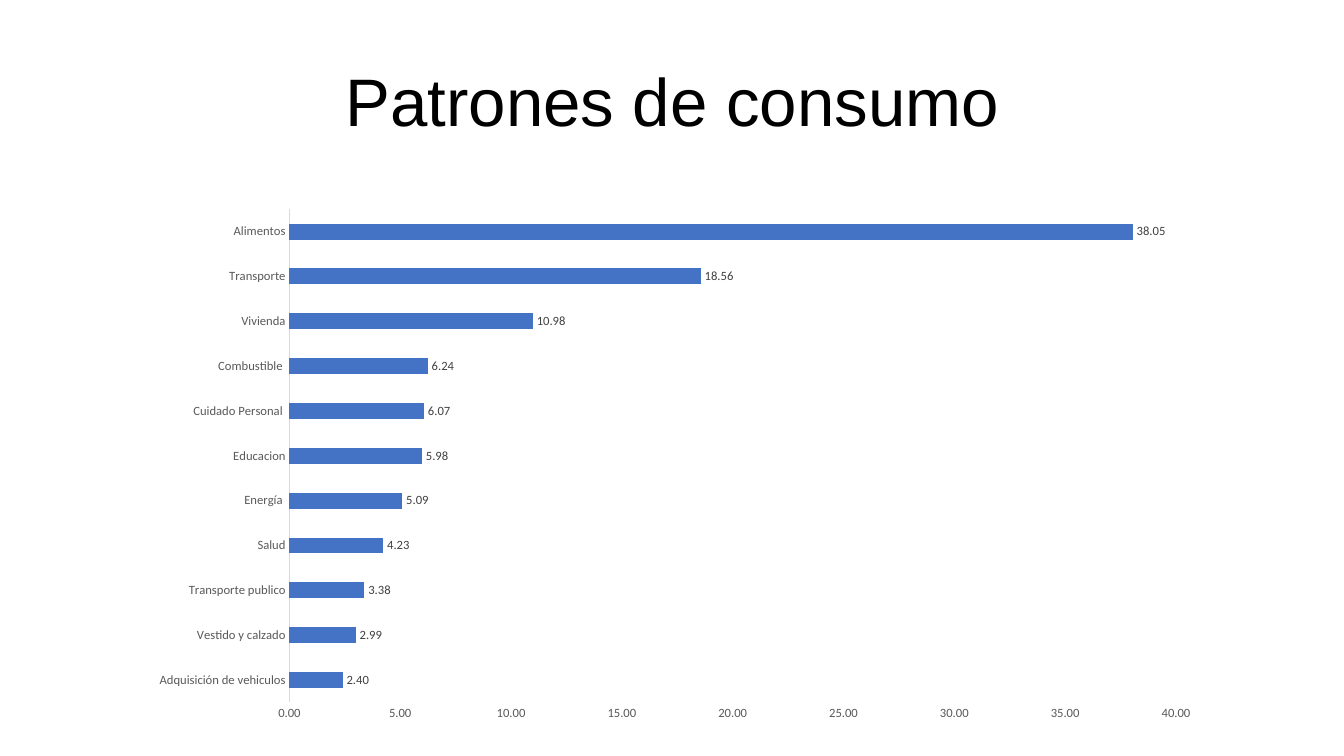
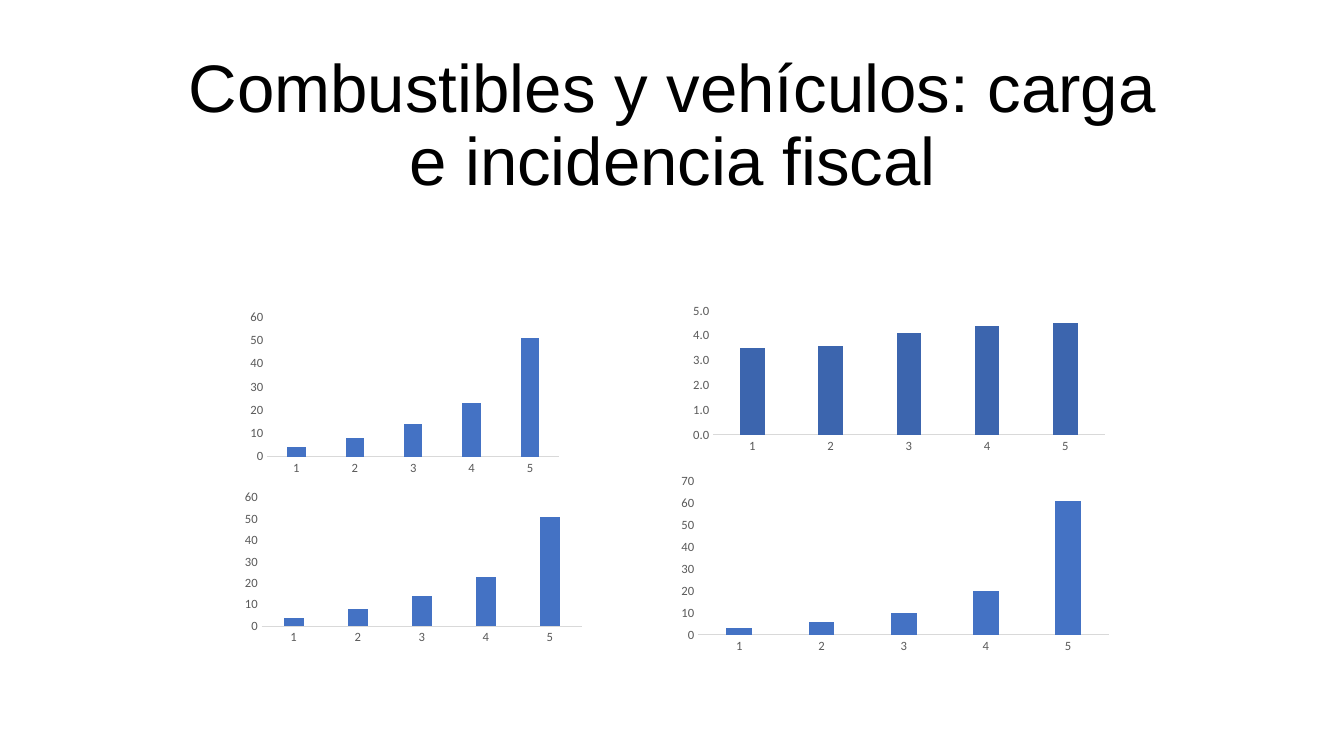
"""Build two slides on consumption patterns and the tax burden of fuels and vehicles."""
from dataclasses import dataclass

from pptx import Presentation
from pptx.chart.data import CategoryChartData
from pptx.dml.color import RGBColor
from pptx.enum.chart import XL_CHART_TYPE, XL_LABEL_POSITION, XL_TICK_MARK
from pptx.enum.text import MSO_ANCHOR, PP_ALIGN
from pptx.util import Inches, Pt

BAR = XL_CHART_TYPE.BAR_CLUSTERED
COLUMN = XL_CHART_TYPE.COLUMN_CLUSTERED
OUTSIDE = XL_LABEL_POSITION.OUTSIDE_END
NO_TICK = XL_TICK_MARK.NONE
BOTTOM = MSO_ANCHOR.BOTTOM
CENTER = PP_ALIGN.CENTER

COLORS = {
    "title": "000000",
    "blue": "4472C4",
    "dark_blue": "3C65AE",
    "axis_text": "595959",
    "axis_line": "D9D9D9",
    "label": "404040",
}
FORMATS = {
    "title": {"name": "Arial", "size": Pt(48)},
    "chart": {"name": "Calibri", "size": Pt(10)},
    "axis": {"name": "Calibri", "size": Pt(9)},
}
QUINTILES = ("1", "2", "3", "4", "5")
SPENDING = {
    "Adquisición de vehiculos": 2.4,
    "Vestido y calzado": 2.99,
    "Transporte publico": 3.38,
    "Salud": 4.23,
    "Energía ": 5.09,
    "Educacion": 5.98,
    "Cuidado Personal ": 6.07,
    "Combustible ": 6.24,
    "Vivienda": 10.98,
    "Transporte": 18.56,
    "Alimentos": 38.05,
}


@dataclass(frozen=True)
class BarChart:
    """Place, data and scale of one bar or column chart."""

    box: tuple[float, float, float, float]
    values: tuple[float, ...]
    top: float
    step: float
    number_format: str = "0"
    color: str = "blue"
    categories: tuple[str, ...] = QUINTILES
    kind: int = COLUMN
    gap: int = 219
    overlap: int = -27
    labels: bool = False


@dataclass(frozen=True)
class ChartSlide:
    """A title, its box and the charts below it."""

    title: str
    title_box: tuple[float, float, float, float]
    charts: tuple[BarChart, ...]


SLIDES = (
    ChartSlide("Patrones de consumo", (1.67, 0.45, 10, 1), (
        BarChart((1.37, 1.97, 10.65, 5.29), tuple(SPENDING.values()), 40, 5, "0.00",
                 categories=tuple(SPENDING), kind=BAR, gap=182, overlap=0, labels=True),
    )),
    ChartSlide("Combustibles y vehículos: carga e incidencia fiscal", (1.67, 1.23, 10, 0.8), (
        BarChart((2.42, 3.04, 3.19, 1.71), (4, 8, 14, 23, 51), 60, 10),
        BarChart((6.79, 2.98, 4.25, 1.55), (3.5, 3.6, 4.1, 4.4, 4.5), 5, 1, "0.0", "dark_blue"),
        BarChart((2.36, 4.83, 3.48, 1.6), (4, 8, 14, 23, 51), 60, 10),
        BarChart((6.67, 4.67, 4.42, 1.85), (3, 6, 10, 20, 61), 70, 10),
    )),
)


def rgb(name: str) -> RGBColor:
    """Return a named colour."""
    return RGBColor.from_string(COLORS[name])


def set_font(font, style: str, color: str) -> None:
    """Apply a font format and a colour."""
    for key, value in FORMATS[style].items():
        setattr(font, key, value)
    font.color.rgb = rgb(color)


def add_title(s, text: str, box: tuple[float, ...]) -> None:
    """Add a centred title that grows upwards from the bottom of its box."""
    tf = s.shapes.add_textbox(*map(Inches, box)).text_frame
    tf.word_wrap = True
    tf.vertical_anchor = BOTTOM
    p = tf.paragraphs[0]
    p.alignment = CENTER
    p.line_spacing = 0.9
    r = p.add_run()
    r.text = text
    set_font(r.font, "title", "title")


def style_axes(chart, spec: BarChart) -> None:
    """Format both axes and set the value scale."""
    for axis in (chart.category_axis, chart.value_axis):
        axis.major_tick_mark = axis.minor_tick_mark = NO_TICK
        axis.has_major_gridlines = False
        set_font(axis.tick_labels.font, "axis", "axis_text")
    line = chart.category_axis.format.line
    line.color.rgb = rgb("axis_line")
    line.width = Pt(0.75)
    values = chart.value_axis
    values.format.line.fill.background()
    scale = {"minimum_scale": 0, "maximum_scale": spec.top, "major_unit": spec.step}
    for key, value in scale.items():
        setattr(values, key, value)
    values.tick_labels.number_format = spec.number_format
    values.tick_labels.number_format_is_linked = False


def add_bar_chart(s, spec: BarChart) -> None:
    """Add one single-series chart."""
    data = CategoryChartData(number_format=spec.number_format)
    data.categories = spec.categories
    data.add_series("Series 1", spec.values)
    chart = s.shapes.add_chart(spec.kind, *map(Inches, spec.box), data).chart
    chart.has_legend = chart.has_title = False
    set_font(chart.font, "chart", "title")
    style_axes(chart, spec)
    plot = chart.plots[0]
    plot.gap_width, plot.overlap = spec.gap, spec.overlap
    plot.vary_by_categories = False
    fill = plot.series[0].format.fill
    fill.solid()
    fill.fore_color.rgb = rgb(spec.color)
    if spec.labels:
        labels = plot.series[0].data_labels
        labels.show_value = True
        labels.position = OUTSIDE
        labels.number_format = spec.number_format
        labels.number_format_is_linked = False
        set_font(labels.font, "axis", "label")


def main() -> None:
    """Build and save the presentation."""
    prs = Presentation()
    prs.slide_width, prs.slide_height = Inches(13.33), Inches(7.5)
    for page in SLIDES:
        s = prs.slides.add_slide(prs.slide_layouts[6])
        add_title(s, page.title, page.title_box)
        for spec in page.charts:
            add_bar_chart(s, spec)
    prs.save("out.pptx")


if __name__ == "__main__":
    main()
